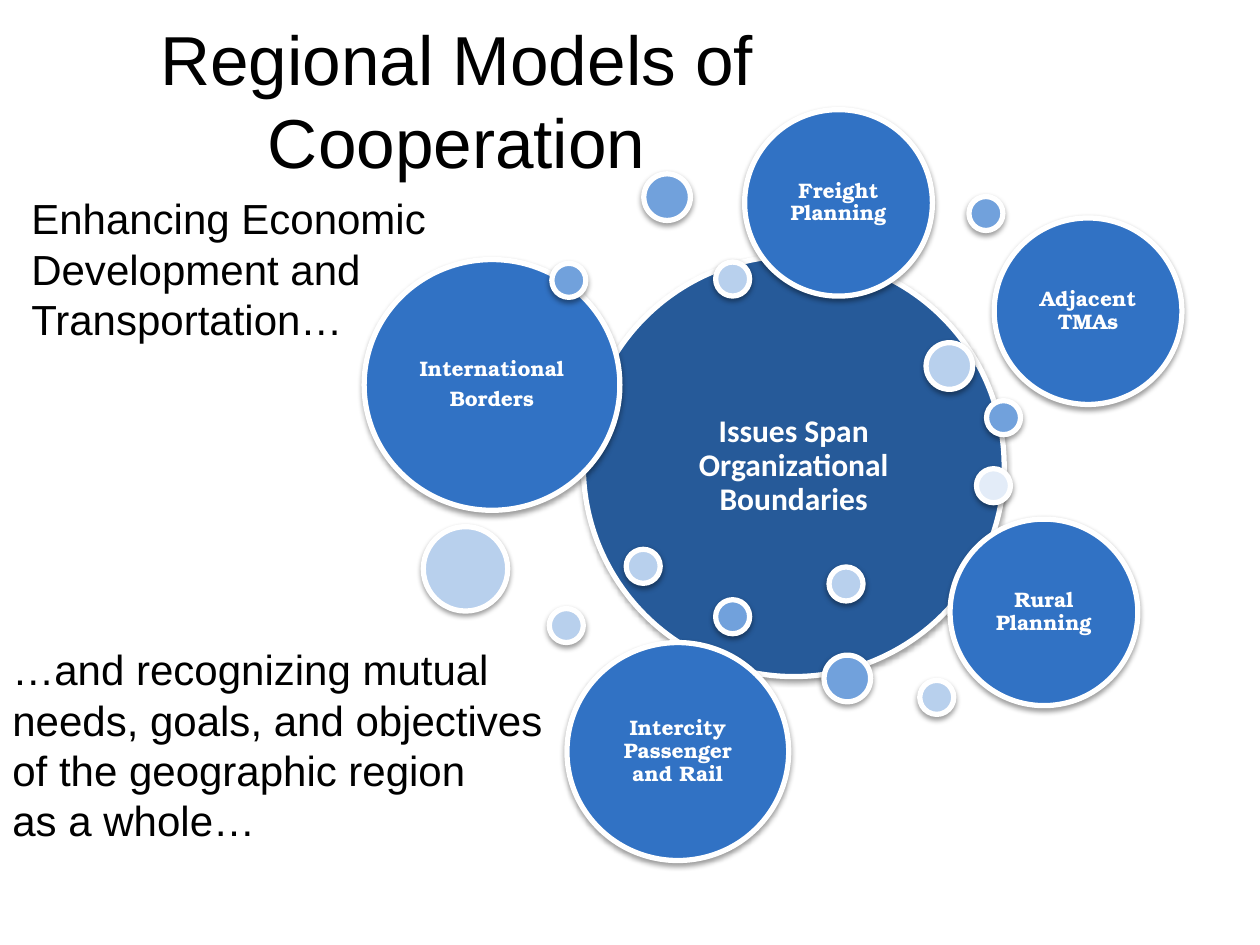
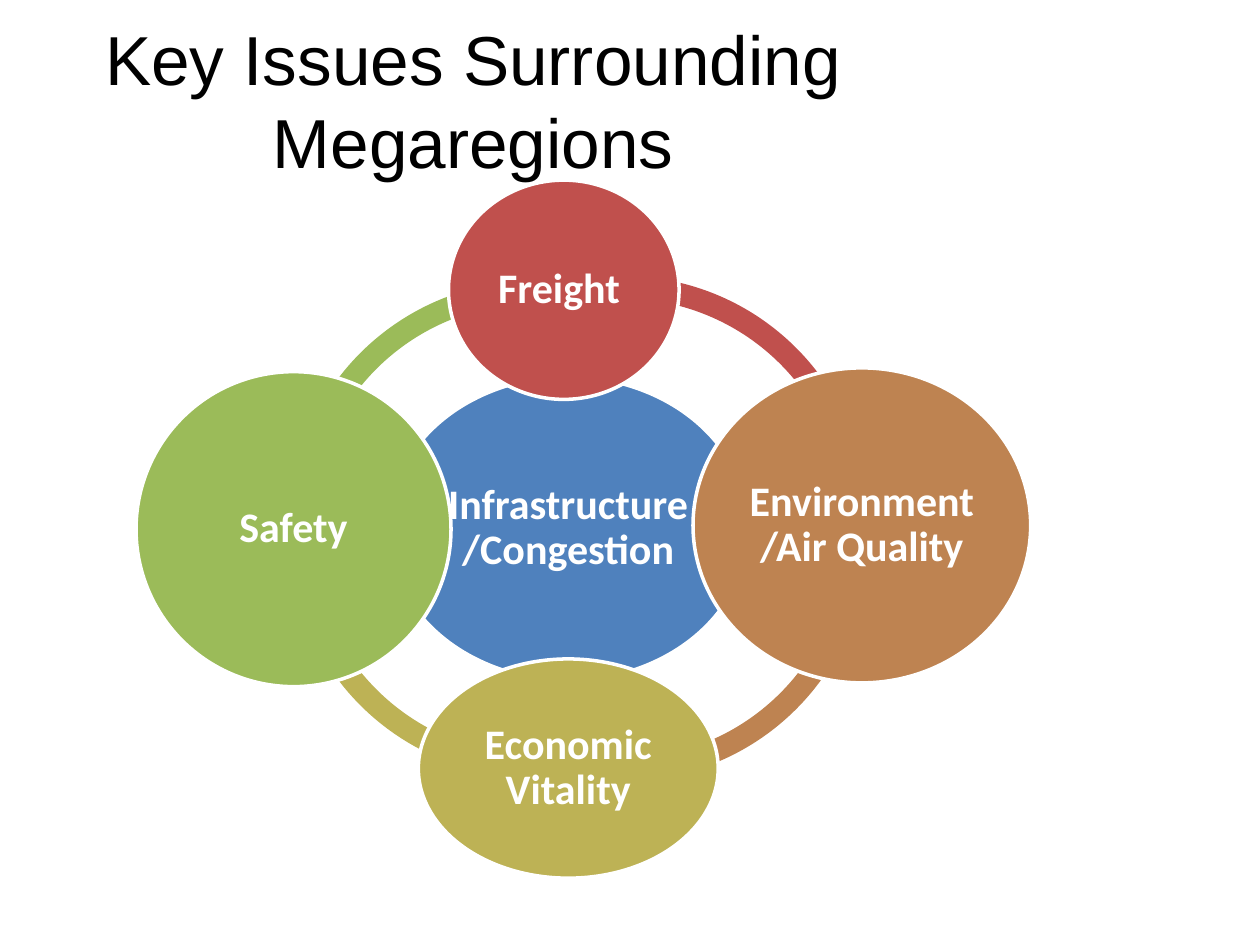
from lxml import etree
from pptx import Presentation
from pptx.dml.color import RGBColor
from pptx.enum.shapes import MSO_SHAPE as Shape
from pptx.enum.text import MSO_ANCHOR as Anchor, PP_ALIGN as Align
from pptx.oxml.ns import qn
from pptx.util import Inches, Pt

COLORS = {
    "black": "000000", "white": "FFFFFF",
    "navy": "265A99", "royal": "3172C4", "sky": "71A1DC", "pale": "B8D0ED", "mist": "E3ECF8",
    "blue": "4F81BD", "red": "C0504D", "brown": "BE8351", "olive": "BDB255", "green": "9BBB59",
}
TITLE = {"size": 39.6, "align": Align.CENTER}
CIRCLE_TEXT = {"color": "white", "bold": True, "align": Align.CENTER, "anchor": Anchor.MIDDLE,
               "line_spacing": 0.9}


def write_text(shape, text, size=24, font="Arial", color="black", bold=False, align=Align.LEFT,
               anchor=Anchor.TOP, inset=None, line_spacing=None, space_after=0):
    """Fill a shape with text, one paragraph for each line."""
    frame = shape.text_frame
    frame.word_wrap = True
    frame.vertical_anchor = anchor
    if inset is not None:
        frame.margin_left = frame.margin_right = Inches(inset)
        frame.margin_top = frame.margin_bottom = Inches(inset)
    frame.text = text
    for paragraph in frame.paragraphs:
        paragraph.alignment = align
        paragraph.line_spacing = line_spacing
        paragraph.space_after = Pt(space_after)
        paragraph.font.size = Pt(size)
        paragraph.font.name = font
        paragraph.font.bold = bold
        paragraph.font.color.rgb = RGBColor.from_string(COLORS[color])


def add_filled(slide, kind, box, color, line_width=0, shadow=False):
    """Add a filled shape with an optional white outline and soft drop shadow."""
    shape = slide.shapes.add_shape(kind, *map(Inches, box))
    shape.shadow.inherit = False
    shape.fill.solid()
    shape.fill.fore_color.rgb = RGBColor.from_string(COLORS[color])
    if line_width:
        shape.line.color.rgb = RGBColor.from_string(COLORS["white"])
        shape.line.width = Pt(line_width)
    else:
        shape.line.fill.background()
    if shadow:
        effects = shape.element.spPr.find(qn("a:effectLst"))
        outer = etree.SubElement(effects, qn("a:outerShdw"), blurRad=str(Pt(3.1)),
                                 dist=str(Pt(1.6)), dir="5400000", rotWithShape="0")
        shade = etree.SubElement(outer, qn("a:srgbClr"), val=COLORS["black"])
        etree.SubElement(shade, qn("a:alpha"), val="38000")
    return shape


presentation = Presentation()
presentation.slide_width, presentation.slide_height = Inches(10), Inches(7.5)
blank = presentation.slide_layouts[6]

# Slide 1: issues around the organizational hub
slide = presentation.slides.add_slide(blank)
captions = [
    ("Regional Models of Cooperation", (0, 0.08, 7.25, 1), TITLE),
    ("…and recognizing mutual needs, goals, and objectives\n"
     "of the geographic region\nas a whole…", (0, 5.06, 4.88, 1.72), {}),
    ("Enhancing Economic Development and Transportation…", (0.15, 1.48, 4.88, 1.31), {}),
]
for text, box, style in captions:
    write_text(slide.shapes.add_textbox(*map(Inches, box)), text, **style)

hub = add_filled(slide, Shape.OVAL, (4.63, 2.03, 3.34, 3.34), "navy", 3, shadow=True)
write_text(hub, "Issues Span Organizational Boundaries", size=18, font="Calibri", inset=0.07,
           **CIRCLE_TEXT)

issues = [
    ("International\nBorders", (2.89, 2.06, 2.03, 1.99)),
    ("Adjacent TMAs", (7.89, 1.73, 1.49, 1.48)),
    ("Rural Planning", (7.54, 4.12, 1.49, 1.48)),
    ("Intercity Passenger and Rail", (4.5, 5.1, 1.76, 1.73)),
    ("Freight Planning", (5.91, 0.87, 1.49, 1.48)),
]
for text, box in issues:
    circle = add_filled(slide, Shape.OVAL, box, "royal", 3, shadow=True)
    write_text(circle, text, size=12, font="TeX Gyre Bonum", inset=0.05, space_after=4.2,
               **CIRCLE_TEXT)

SMALL, MEDIUM, LARGE = 0.27, 0.37, 0.67
dots = [
    ("sky", SMALL, [(5.68, 4.76), (7.83, 3.18), (4.38, 2.09), (7.69, 1.56)]),
    ("sky", MEDIUM, [(6.54, 5.2), (5.11, 1.38)]),
    ("pale", SMALL, [(5.68, 2.08), (4.97, 4.36), (7.3, 5.4), (6.58, 4.5), (4.36, 4.83)]),
    ("pale", MEDIUM, [(7.35, 2.72)]),
    ("pale", LARGE, [(3.36, 4.18)]),
    ("mist", SMALL, [(7.75, 3.72)]),
]
for color, diameter, corners in dots:
    for left, top in corners:
        add_filled(slide, Shape.OVAL, (left, top, diameter, diameter), color, 3, shadow=True)

# Slide 2: ring of key issues
slide = presentation.slides.add_slide(blank)
write_text(slide.shapes.add_textbox(*map(Inches, (0.01, 0.08, 7.49, 1.08))),
           "Key Issues Surrounding Megaregions", **TITLE)

ARC_SIZE, ARC_THICKNESS = 3.9, 0.046
DEGREE = 0.6  # one degree in adjustment units
arcs = [  # colour, left, top, start and end angle
    ("green", 2.29, 2.23, 179.53, 277.39),
    ("olive", 2.29, 2.27, 81.68, 180.6),
    ("brown", 2.99, 2.3, 357.6, 103.05),
    ("red", 2.99, 2.19, 256.05, 0.77),
]
for color, left, top, start, end in arcs:
    arc = add_filled(slide, Shape.BLOCK_ARC, (left, top, ARC_SIZE, ARC_SIZE), color)
    for index, value in enumerate((start * DEGREE, end * DEGREE, ARC_THICKNESS)):
        arc.adjustments[index] = value

key_issues = [
    ("Infrastructure/Congestion", "blue", (3.08, 2.99, 2.86, 2.41)),
    ("Freight ", "red", (3.56, 1.43, 1.83, 1.74)),
    ("Environment/Air Quality", "brown", (5.5, 2.92, 2.68, 2.5)),
    ("Economic Vitality", "olive", (3.32, 5.23, 2.38, 1.74)),
    ("Safety", "green", (1.08, 2.95, 2.5, 2.5)),
]
for text, color, box in key_issues:
    circle = add_filled(slide, Shape.OVAL, box, color, 2)
    write_text(circle, text, font="Calibri", inset=0.03, **CIRCLE_TEXT)

presentation.save("out.pptx")
